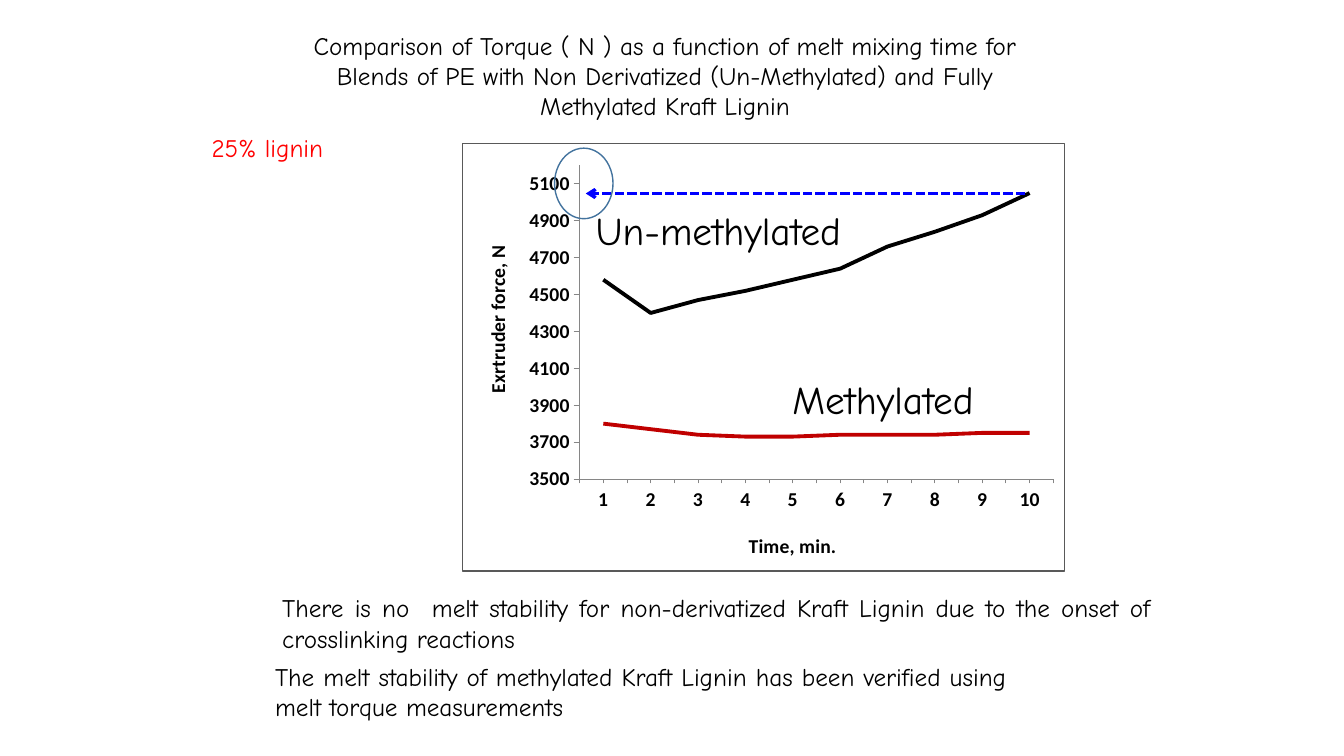
from lxml import etree
from pptx import Presentation
from pptx.chart.data import CategoryChartData as ChartData
from pptx.dml.color import RGBColor
from pptx.enum.chart import XL_CHART_TYPE as Kind, XL_TICK_MARK as Tick
from pptx.enum.dml import MSO_LINE_DASH_STYLE as Dash
from pptx.enum.shapes import MSO_CONNECTOR as Link, MSO_SHAPE as Form
from pptx.enum.text import MSO_ANCHOR as Anchor, MSO_AUTO_SIZE as Fit, PP_ALIGN as Align
from pptx.oxml import parse_xml
from pptx.oxml.ns import nsdecls, qn
from pptx.util import Inches, Pt

BLACK = RGBColor(0x00, 0x00, 0x00)
RED = RGBColor(0xFF, 0x00, 0x00)
DARK_RED = RGBColor(0xC0, 0x00, 0x00)
BLUE = RGBColor(0x00, 0x00, 0xFF)
STEEL = RGBColor(0x43, 0x73, 0x9E)
GREY = RGBColor(0x86, 0x86, 0x86)

FORCE = [
    ("Un-methylated", BLACK, (4580, 4400, 4470, 4520, 4580, 4640, 4760, 4840, 4930, 5050)),
    ("Methylated", DARK_RED, (3800, 3770, 3740, 3730, 3730, 3740, 3740, 3740, 3750, 3750)),
]


def layout(inner=False, **spots):
    """Return a manual chart layout; spots are fractions of the chart."""
    root = parse_xml(f"<c:layout {nsdecls('c')}><c:manualLayout/></c:layout>")
    tags = [("layoutTarget", "inner")] if inner else []
    tags += [("xMode", "edge"), ("yMode", "edge"), *spots.items()]
    for tag, val in tags:
        etree.SubElement(root[0], qn(f"c:{tag}")).set("val", str(val))
    return root


def set_layout(host, new, index):
    """Swap the layout of a plot area or title for a new one."""
    for old in host.findall(qn("c:layout")):
        host.remove(old)
    host.insert(index, new)


class Deck:
    def __init__(self):
        self.prs = Presentation()
        self.prs.slide_width = Inches(13.33)
        self.prs.slide_height = Inches(7.5)
        self.face = "Comic Neue"
        self.slide = self.prs.slides.add_slide(self.prs.slide_layouts[5])
        self.shapes = self.slide.shapes

    def fill_text(self, shape, text, size, color, align, wrap):
        frame = shape.text_frame
        frame.word_wrap = wrap
        frame.auto_size = Fit.SHAPE_TO_FIT_TEXT
        frame.vertical_anchor = Anchor.TOP
        para = frame.paragraphs[0]
        para.alignment = align
        run = para.add_run()
        run.text = text
        run.font.name = self.face
        run.font.size = Pt(size)
        run.font.color.rgb = color

    def title(self, text, x, y, w, h):
        shape = self.shapes.title
        shape.left, shape.top, shape.width, shape.height = map(Inches, (x, y, w, h))
        self.fill_text(shape, text, 18, BLACK, Align.CENTER, True)

    def text(self, text, x, y, w, h, size=18, color=BLACK, align=Align.LEFT, wrap=False):
        box = self.shapes.add_textbox(*map(Inches, (x, y, w, h)))
        self.fill_text(box, text, size, color, align, wrap)

    def arrow(self, x1, y1, x2, y2):
        line = self.shapes.add_connector(Link.STRAIGHT, *map(Inches, (x1, y1, x2, y2)))
        line.line.color.rgb = BLUE
        line.line.width = Pt(2.25)
        line.line.dash_style = Dash.SQUARE_DOT
        props = line._element.spPr
        etree.SubElement(props.find(qn("a:ln")), qn("a:tailEnd")).set("type", "arrow")
        etree.SubElement(props, qn("a:effectLst"))

    def ring(self, x, y, w, h):
        oval = self.shapes.add_shape(Form.OVAL, *map(Inches, (x, y, w, h)))
        oval.shadow.inherit = False
        oval.fill.background()
        oval.line.color.rgb = STEEL
        oval.line.width = Pt(1)

    def axis(self, axis, name, x, y):
        axis.has_major_gridlines = False
        axis.format.line.color.rgb = GREY
        axis.format.line.width = Pt(0.75)
        axis.tick_labels.font.size = Pt(14)
        axis.tick_labels.font.bold = True
        run = axis.axis_title.text_frame.paragraphs[0].add_run()
        run.text = name
        run.font.size = Pt(14)
        run.font.bold = True
        run.font.color.rgb = BLACK
        set_layout(axis.axis_title._element, layout(x=x, y=y), 1)

    def chart(self, x, y, w, h):
        data = ChartData()
        data.categories = [str(n) for n in range(1, 11)]
        for name, _, vals in FORCE:
            data.add_series(name, vals)
        chart = self.shapes.add_chart(Kind.LINE, *map(Inches, (x, y, w, h)), data).chart
        chart.has_legend = chart.has_title = False
        chart.font.name = "Calibri"
        chart.font.size = Pt(10)
        chart.font.color.rgb = BLACK
        plot = chart.plots[0]
        plot.vary_by_categories = False
        for line, (_, color, _) in zip(plot.series, FORCE):
            line.smooth = False
            line.format.line.color.rgb = color
            line.format.line.width = Pt(2.75)

        time, force = chart.category_axis, chart.value_axis
        self.axis(time, "Time, min.", 0.47, 0.9)
        self.axis(force, "Exrtruder force, N", 0.03, 0.23)
        time.major_tick_mark, time.minor_tick_mark = Tick.NONE, Tick.OUTSIDE
        force.major_tick_mark, force.minor_tick_mark = Tick.OUTSIDE, Tick.NONE
        force.minimum_scale, force.maximum_scale, force.major_unit = 3500, 5200, 200

        space = chart._chartSpace
        body = space.find(qn("c:chart"))
        set_layout(body.find(qn("c:plotArea")),
                   layout(True, x=0.195, y=0.051, w=0.787, h=0.734), 0)
        body.addnext(parse_xml(
            f"<c:spPr {nsdecls('c', 'a')}>"
            '<a:solidFill><a:srgbClr val="FFFFFF"/></a:solidFill>'
            '<a:ln w="9525"><a:solidFill><a:srgbClr val="595959"/></a:solidFill></a:ln>'
            "</c:spPr>"))


def main():
    deck = Deck()
    deck.chart(4.58, 1.42, 5.98, 4.25)
    deck.title("Comparison of Torque ( N ) as a function of melt mixing time for "
               "Blends of PE with Non Derivatized (Un-Methylated) and Fully "
               "Methylated Kraft Lignin", 2.63, 0.25, 7.93, 1.01)
    deck.text("25% lignin", 2, 1.26, 1.4, 0.4, color=RED)
    deck.text("Methylated", 7.76, 3.67, 2.32, 0.57, size=28)
    deck.text("Un-methylated", 5.81, 2, 2.94, 0.57, size=28)
    deck.arrow(10.17, 1.92, 5.81, 1.92)
    deck.ring(5.5, 1.47, 0.58, 0.7)
    deck.text("The melt stability of methylated Kraft Lignin has been verified using "
              "melt torque measurements", 2.63, 6.51, 7.45, 0.71,
              align=Align.JUSTIFY, wrap=True)
    deck.text("There is no  melt stability for non-derivatized Kraft Lignin due to "
              "the onset of crosslinking reactions", 2.7, 5.83, 8.81, 0.71,
              align=Align.JUSTIFY, wrap=True)
    deck.prs.save("out.pptx")


if __name__ == "__main__":
    main()
